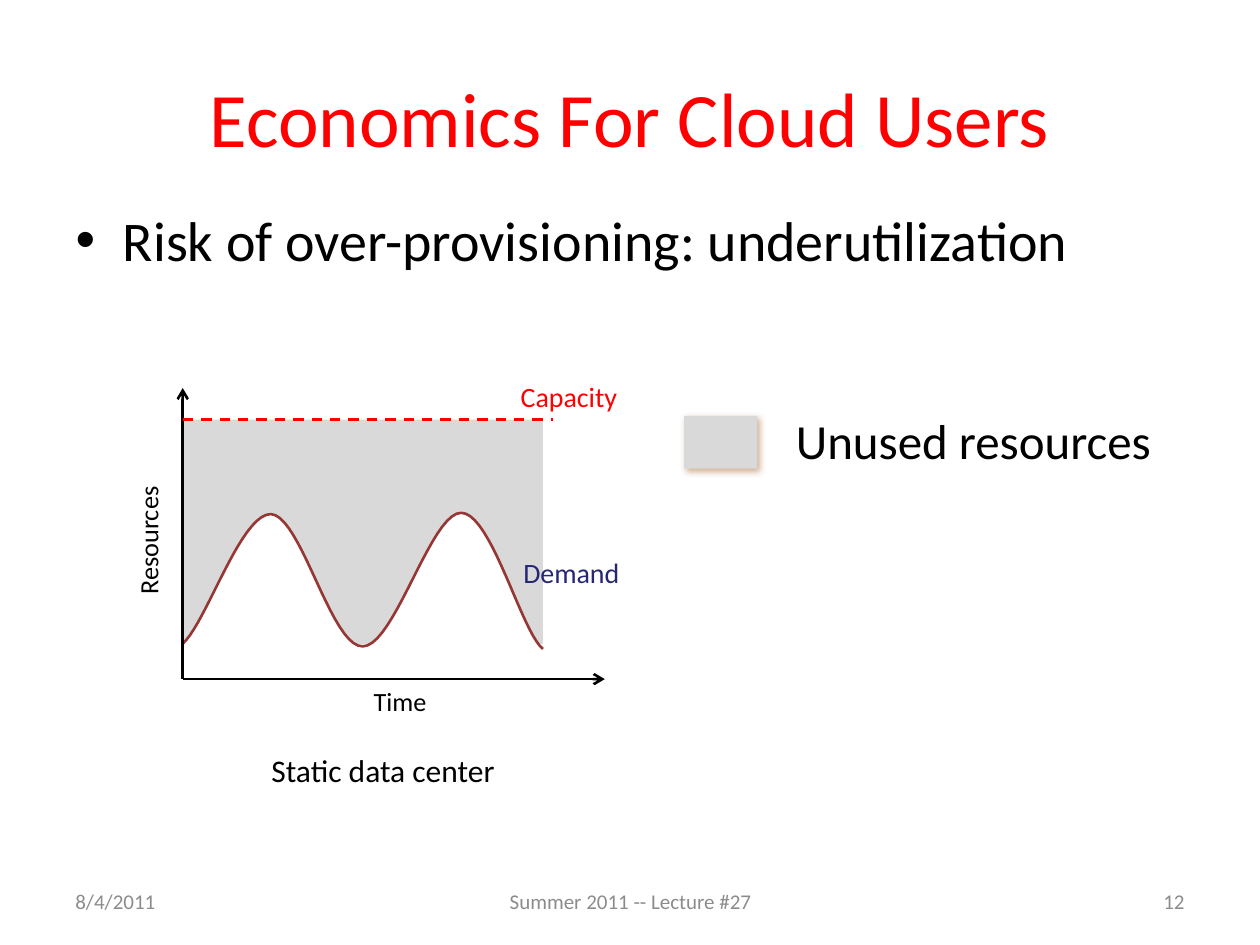
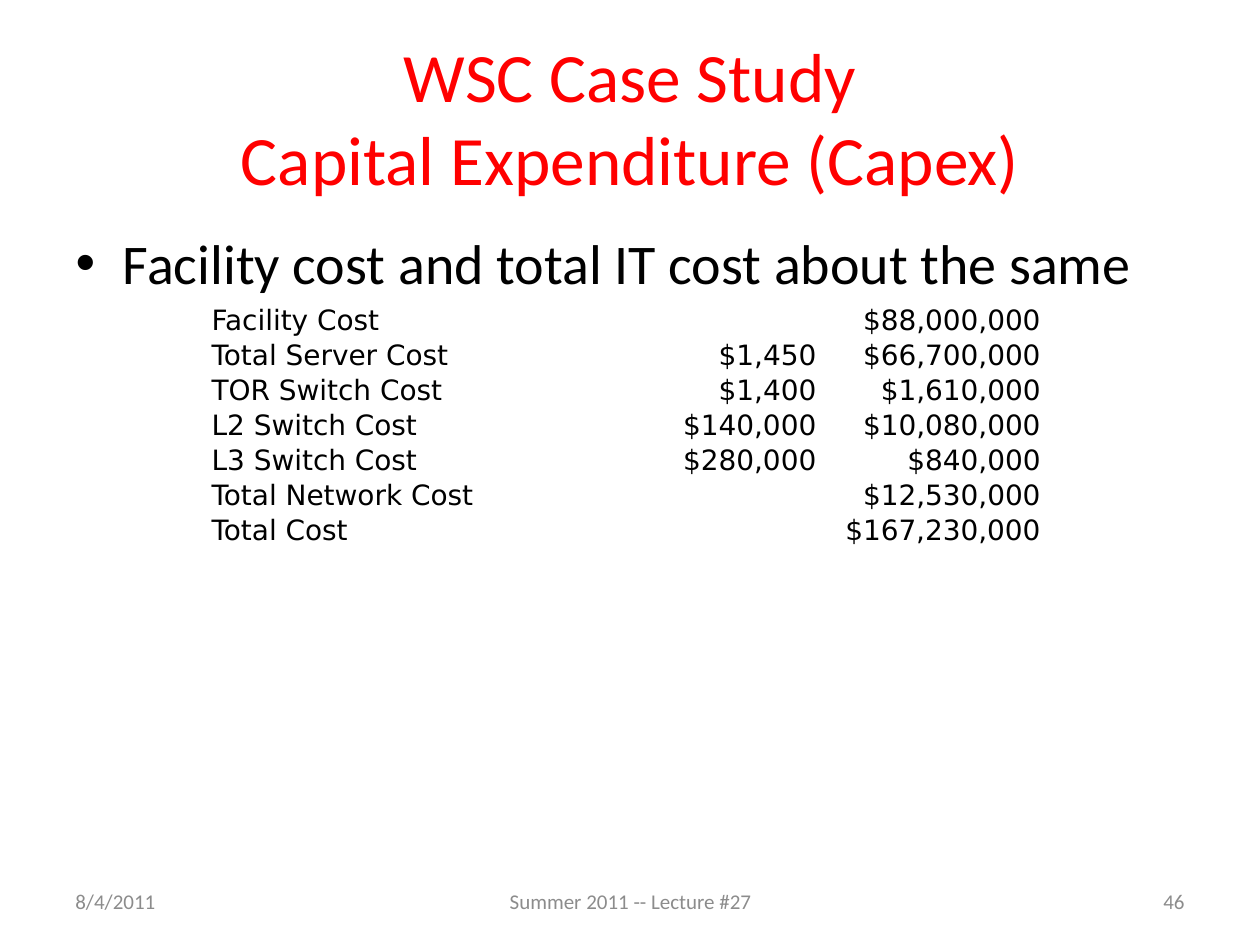
from dataclasses import dataclass

from lxml.etree import SubElement
from pptx import Presentation
from pptx.dml.color import RGBColor
from pptx.enum.dml import MSO_LINE
from pptx.enum.shapes import MSO_CONNECTOR, MSO_SHAPE
from pptx.enum.text import MSO_ANCHOR as ANCHOR, MSO_AUTO_SIZE, PP_ALIGN as ALIGN
from pptx.oxml.ns import qn
from pptx.util import Inches, Pt

BLACK = RGBColor(0x00, 0x00, 0x00)
WHITE = RGBColor(0xFF, 0xFF, 0xFF)
RED = RGBColor(0xFF, 0x00, 0x00)
NAVY = RGBColor(0x26, 0x26, 0x73)
MAROON = RGBColor(0x95, 0x37, 0x35)
BROWN = RGBColor(0x98, 0x48, 0x07)
GRAY = RGBColor(0xD9, 0xD9, 0xD9)
FOOTER_GRAY = RGBColor(0x8C, 0x8C, 0x8C)
FONT, TABLE_FONT = "Calibri", "DejaVu Sans"

# The slide is a grid of 40 columns and 30 rows
SLIDE_W, SLIDE_H = Inches(10), Inches(7.5)
COL, ROW = SLIDE_W / 40, SLIDE_H / 30


@dataclass
class Box:
    """An area of the slide, in columns and rows."""
    x: float
    y: float
    w: float
    h: float

    def sub(self, x, y, w, h):
        return Box(self.x + x, self.y + y, w, h)

    def point(self, x, y):
        return round((self.x + x) * COL), round((self.y + y) * ROW)

    def emu(self):
        return *self.point(0, 0), round(self.w * COL), round(self.h * ROW)


TITLE_BOX = Box(2, 1.2, 36, 5)
FOOTER_BOX = Box(2, 27.8, 36, 1.6)


# Shared parts
def add_run(p, text, size, color=BLACK, font=FONT):
    r = p.add_run()
    r.text = text
    r.font.size, r.font.name = Pt(size), font
    r.font.color.rgb = color


def add_label(s, box, text, size, color=BLACK, align=ALIGN.CENTER,
              anchor=ANCHOR.TOP, wrap=False):
    tf = s.shapes.add_textbox(*box.emu()).text_frame
    tf.word_wrap, tf.vertical_anchor = wrap, anchor
    p = tf.paragraphs[0]
    p.alignment = align
    add_run(p, text, size, color)
    return tf


def add_rect(s, box, color):
    sp = s.shapes.add_shape(MSO_SHAPE.RECTANGLE, *box.emu())
    sp.shadow.inherit = False
    sp.fill.solid()
    sp.fill.fore_color.rgb = color
    sp.line.fill.background()
    return sp


def add_line(s, start, end, color):
    line = s.shapes.add_connector(MSO_CONNECTOR.STRAIGHT, *start, *end)
    line.line.color.rgb, line.line.width = color, Pt(1.5)
    SubElement(line._element.spPr, qn("a:effectLst"))
    return line


def place(holder, box):
    holder.left, holder.top, holder.width, holder.height = box.emu()
    holder.text_frame.auto_size = MSO_AUTO_SIZE.NONE
    return holder.text_frame


def add_footer(s, number):
    parts = [(0, 9.32, "8/4/2011", ALIGN.LEFT),
             (11.68, 12.68, "Summer 2011 -- Lecture #27", ALIGN.CENTER),
             (26.68, 9.32, str(number), ALIGN.RIGHT)]
    for x, w, text, align in parts:
        add_label(s, FOOTER_BOX.sub(x, 0, w, FOOTER_BOX.h), text, 12,
                  FOOTER_GRAY, align, ANCHOR.MIDDLE, wrap=True)


def add_content_slide(prs, title_lines, title_size, bullet, body_box, number):
    s = prs.slides.add_slide(prs.slide_layouts[1])
    tf = place(s.shapes.title, TITLE_BOX)
    tf.vertical_anchor = ANCHOR.MIDDLE
    p = tf.paragraphs[0]
    p.alignment = ALIGN.CENTER
    for i, text in enumerate(title_lines):
        if i:
            p.add_line_break()
        add_run(p, text, title_size, RED)
    tf = place(s.placeholders[1], body_box)
    add_run(tf.paragraphs[0], bullet, 32)
    add_footer(s, number)
    return s


# Demand and capacity diagram
DEMAND_START = (0, 8.12)
DEMAND_CURVES = [  # two control points and an end point each
    ((0.76, 7.44), (1.84, 4), (2.8, 4)),
    ((3.76, 4.04), (4.72, 8.24), (5.72, 8.2)),
    ((6.72, 8.2), (7.88, 3.96), (8.84, 3.96)),
    ((9.8, 3.96), (10.76, 7.76), (11.44, 8.28)),
]


def curve_points(start, curves, steps=20):
    for c1, c2, end in curves:
        for i in range(1, steps + 1):
            t = i / steps
            u = 1 - t
            yield tuple(u**3 * a + 3 * u * u * t * b + 3 * u * t * t * c + t**3 * d
                        for a, b, c, d in zip(start, c1, c2, end))
        start = end


def add_demand_diagram(s, plot):
    # Unused area, with the white area under the demand curve over it
    add_rect(s, plot.sub(0, 1, 11.44, 7.12), GRAY)
    fb = s.shapes.build_freeform(*plot.point(*DEMAND_START))
    fb.add_line_segments([plot.point(*pt) for pt in
                          curve_points(DEMAND_START, DEMAND_CURVES)], close=False)
    demand = fb.convert_to_shape()
    demand.shadow.inherit = False
    demand.fill.solid()
    demand.fill.fore_color.rgb = WHITE
    demand.line.color.rgb, demand.line.width = MAROON, Pt(1.5)

    # Axes and capacity line
    origin = plot.point(0, plot.h)
    for end in (plot.point(0, 0), plot.point(plot.w, plot.h)):
        axis = add_line(s, origin, end, BLACK)
        SubElement(axis.line._get_or_add_ln(), qn("a:tailEnd"), type="arrow")
    capacity = add_line(s, plot.point(0, 1), plot.point(11.76, 1), RED)
    capacity.line.dash_style = MSO_LINE.DASH

    # Labels
    add_label(s, plot.sub(10.28, 5.12, 4.12, 1.48), "Demand", 16, NAVY)
    add_label(s, plot.sub(10.16, -0.48, 4.2, 1.48), "Capacity", 16, RED)
    add_label(s, plot.sub(5.6, plot.h, 2.6, 1.4), "Time", 15)
    tf = add_label(s, plot.sub(-1.8, 2.64, 1.8, 4.4), "Resources", 15)
    tf._txBody.bodyPr.set("vert", "vert270")
    add_label(s, plot.sub(0.72, 11.32, 11.28, 2.04), "Static data center", 18)


def add_legend(s, box):
    swatch = add_rect(s, box.sub(0, 0.36, 2.32, 1.68), GRAY)
    effects = swatch._element.spPr.find(qn("a:effectLst"))
    shadow = SubElement(effects, qn("a:outerShdw"), blurRad=str(Pt(4)),
                        dist=str(Pt(2)), dir="2700000", rotWithShape="0")
    color = SubElement(shadow, qn("a:srgbClr"), val=str(BROWN))
    SubElement(color, qn("a:alpha"), val="43000")
    add_label(s, box.sub(2.4, 0, box.w - 2.4, box.h), "Unused resources", 28)


# Cost table
COSTS = [
    ("Facility Cost", "", "$88,000,000"),
    ("Total Server Cost", "$1,450", "$66,700,000"),
    ("TOR Switch Cost", "$1,400", "$1,610,000"),
    ("L2 Switch Cost", "$140,000", "$10,080,000"),
    ("L3 Switch Cost", "$280,000", "$840,000"),
    ("Total Network Cost", "", "$12,530,000"),
    ("Total Cost", "", "$167,230,000"),
]
COST_COLS = (14.48, 5.08, 7.12)


def add_cost_table(s, box):
    table = s.shapes.add_table(len(COSTS), len(COST_COLS), *box.emu()).table
    table.first_row = table.horz_banding = False
    for column, width in zip(table.columns, COST_COLS):
        column.width = round(width * COL)
    for i, row in enumerate(COSTS):
        for j, text in enumerate(row):
            cell = table.cell(i, j)
            cell.fill.background()
            cell.vertical_anchor = ANCHOR.BOTTOM
            cell.margin_left = cell.margin_top = Inches(0.01)
            cell.margin_right = Inches(0.08 if j else 0.01)
            cell.margin_bottom = 0
            p = cell.text_frame.paragraphs[0]
            p.alignment = ALIGN.RIGHT if j else ALIGN.LEFT
            if text:
                add_run(p, text, 16, font=TABLE_FONT)
            else:  # keeps an empty cell from stretching its row
                SubElement(p._p, qn("a:endParaRPr"), sz="1600")


def main():
    prs = Presentation()
    prs.slide_width, prs.slide_height = SLIDE_W, SLIDE_H

    s = add_content_slide(prs, ["Economics For Cloud Users"], 44,
                          "Risk of over-provisioning: underutilization",
                          Box(2, 6.32, 36.68, 23), 12)
    add_demand_diagram(s, Box(5.8, 12.32, 13.4, 9.24))
    add_legend(s, Box(21.72, 12.84, 15.96, 2.28))

    s = add_content_slide(prs, ["WSC Case Study", "Capital Expenditure (Capex)"], 39.6,
                          "Facility cost and total IT cost about the same",
                          Box(2, 7.04, 36, 2.8), 46)
    add_cost_table(s, Box(6.68, 9.6, sum(COST_COLS), 1.09 * len(COSTS)))

    prs.save("out.pptx")


if __name__ == "__main__":
    main()
